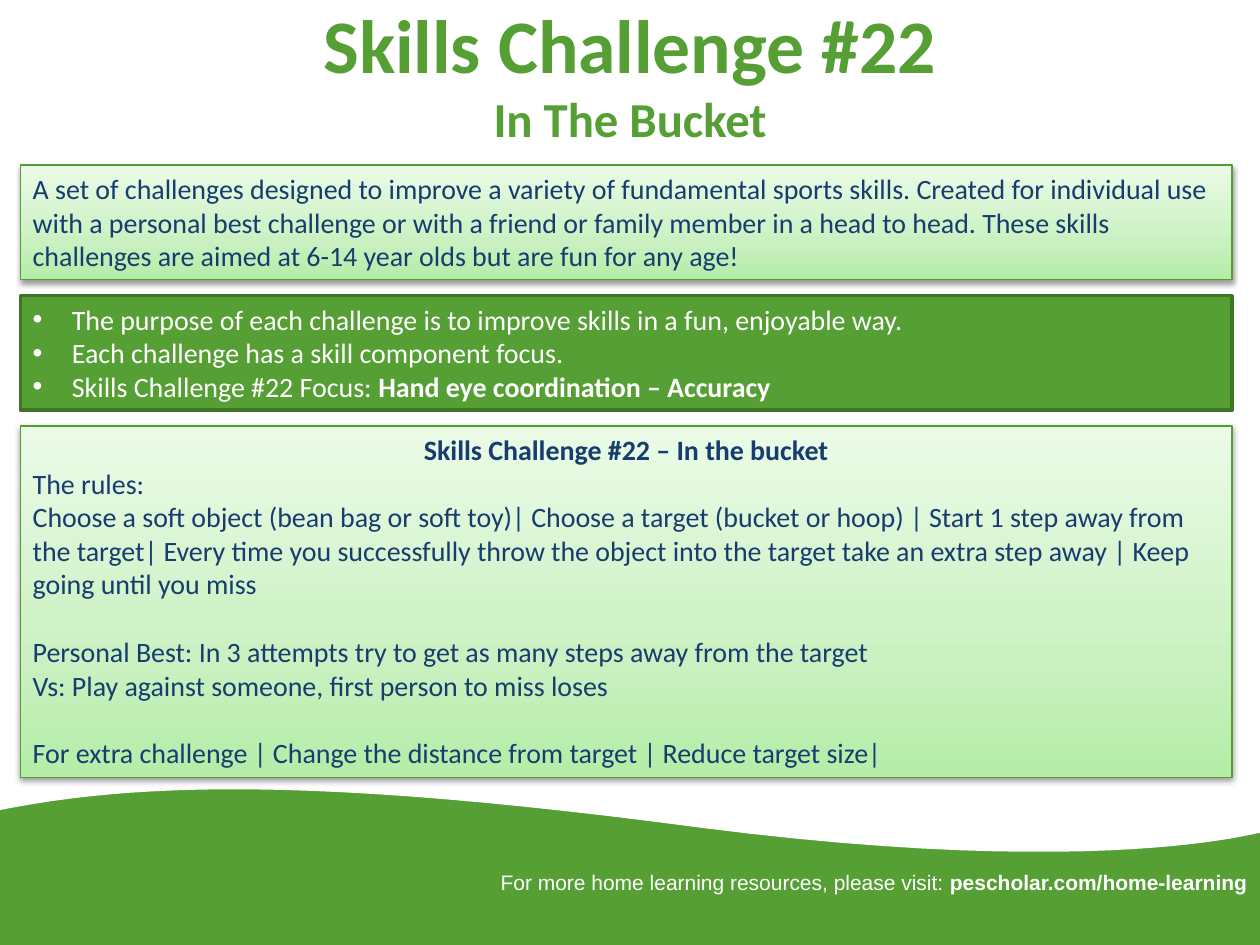
from lxml import etree
from pptx import Presentation
from pptx.dml.color import RGBColor
from pptx.enum.shapes import MSO_SHAPE
from pptx.enum.text import MSO_ANCHOR, MSO_AUTO_SIZE, PP_ALIGN
from pptx.oxml import parse_xml
from pptx.oxml.ns import nsdecls, qn
from pptx.util import Cm, Pt

RECTANGLE = MSO_SHAPE.RECTANGLE
TOP, MIDDLE = MSO_ANCHOR.TOP, MSO_ANCHOR.MIDDLE
NO_FIT = MSO_AUTO_SIZE.NONE
LEFT, CENTER, RIGHT = PP_ALIGN.LEFT, PP_ALIGN.CENTER, PP_ALIGN.RIGHT

GREEN = RGBColor(0x55, 0x9F, 0x34)
EDGE_GREEN = RGBColor(0x52, 0x9E, 0x30)
DARK_GREEN = RGBColor(0x3F, 0x76, 0x26)
NAVY = RGBColor(0x17, 0x3C, 0x6F)
WHITE = RGBColor(0xFF, 0xFF, 0xFF)
BLACK = RGBColor(0x00, 0x00, 0x00)
PANEL_STOPS = [
    (0, RGBColor(0xB4, 0xED, 0xA7)),
    (35, RGBColor(0xCB, 0xF1, 0xC2)),
    (100, RGBColor(0xEB, 0xFB, 0xE7)),
]

PAGE_WIDTH, PAGE_HEIGHT = 25.4, 19.05
PANEL_LEFT, PANEL_WIDTH = 0.41, 24.43
BLANK_LINE = Pt(19.5)
BODY = {"name": "Calibri", "size": Pt(16), "bold": False}
HEADING = {"name": "Calibri", "size": Pt(43.2), "bold": True}
FOOTER = {"name": "Arial", "size": Pt(12), "bold": False}

INTRO = [
    {"text": "A set of challenges designed to improve a variety of fundamental sports skills. "
             "Created for individual use with a personal best challenge or with a friend or "
             "family member in a head to head. These skills challenges are aimed at 6-14 year "
             "olds but are fun for any age!"},
]
PURPOSES = [
    [("The purpose of each challenge is to improve skills in a fun, enjoyable way.", False)],
    [("Each challenge has a skill component focus.", False)],
    [("Skills Challenge #22 Focus: ", False), ("Hand eye coordination – Accuracy", True)],
]
RULES = [
    {"text": "Skills Challenge #22 – In the bucket", "bold": True, "align": CENTER},
    {"text": "The rules:"},
    {"text": "Choose a soft object (bean bag or soft toy)| Choose a target (bucket or hoop) | "
             "Start 1 step away from the target| Every time you successfully throw the object "
             "into the target take an extra step away | Keep going until you miss"},
    {"text": "Personal Best: In 3 attempts try to get as many steps away from the target",
     "gap": BLANK_LINE},
    {"text": "Vs: Play against someone, first person to miss loses"},
    {"text": "For extra challenge | Change the distance from target | Reduce target size|",
     "gap": BLANK_LINE},
]


def add_span(para, text, color, **formats):
    span = para.add_run()
    span.text = text
    for name, value in formats.items():
        setattr(span.font, name, value)
    span.font.color.rgb = color


def place(shape, box):
    for name, value in zip(("left", "top", "width", "height"), box):
        setattr(shape, name, Cm(value))


def prepare_frame(shape, anchor):
    frame = shape.text_frame
    formats = {"word_wrap": True, "auto_size": NO_FIT, "vertical_anchor": anchor,
               "margin_left": Cm(0.25), "margin_right": Cm(0.25),
               "margin_top": Cm(0.13), "margin_bottom": Cm(0.13)}
    for name, value in formats.items():
        setattr(frame, name, value)
    return frame


def paragraphs(frame, count):
    return [frame.paragraphs[0]] + [frame.add_paragraph() for _ in range(count - 1)]


def curve(start, first, second, end, steps=24):
    for step in range(1, steps + 1):
        t = step / steps
        yield tuple((1 - t) ** 3 * a + 3 * (1 - t) ** 2 * t * b + 3 * (1 - t) * t ** 2 * c + t ** 3 * d
                    for a, b, c, d in zip(start, first, second, end))


def paint(shape, color):
    shape.fill.solid()
    shape.fill.fore_color.rgb = color
    shape.line.fill.background()
    shape.shadow.inherit = False


def add_wave(page, box):
    left, top, width, height = box
    ground_top = 0.58
    ground = page.shapes.add_shape(RECTANGLE, Cm(left), Cm(top + ground_top),
                                   Cm(width), Cm(height - ground_top))
    paint(ground, GREEN)
    start, crossing, end = (0, 1.14), (14.15, 1.5), (width, 1.6)
    points = [start,
              *curve(start, (2.67, 0.61), (6.22, 0.44), crossing),
              *curve(crossing, (22.28, 2.54), (width, 1.57), end),
              (width, 0)]
    outline = page.shapes.build_freeform(Cm(left), Cm(top))
    outline.add_line_segments([(Cm(left + x), Cm(top + y)) for x, y in points], close=True)
    paint(outline.convert_to_shape(), WHITE)


def add_title(page, box):
    title = page.shapes.title
    place(title, box)
    para = prepare_frame(title, MIDDLE).paragraphs[0]
    para.alignment = CENTER
    add_span(para, "Skills Challenge #22", GREEN, **HEADING)
    para.add_line_break()
    add_span(para, "In The Bucket", GREEN, **{**HEADING, "size": Pt(27.9)})


def add_panel(page, box, items):
    panel = page.shapes.add_shape(RECTANGLE, *map(Cm, box))
    properties = panel._element.spPr
    stops = "".join(f'<a:gs pos="{position * 1000}"><a:srgbClr val="{color}"/></a:gs>'
                    for position, color in PANEL_STOPS)
    properties.append(parse_xml(f'<a:gradFill {nsdecls("a")}><a:gsLst>{stops}</a:gsLst>'
                                '<a:lin ang="16200000" scaled="0"/></a:gradFill>'))
    panel.line.color.rgb = EDGE_GREEN
    panel.line.width = Pt(0.75)
    panel.shadow.inherit = False
    shadow = etree.SubElement(properties.find(qn("a:effectLst")), qn("a:outerShdw"),
                              blurRad=str(Pt(3.1)), dist=str(Pt(1.6)),
                              dir="5400000", rotWithShape="0")
    shade = etree.SubElement(shadow, qn("a:srgbClr"), val=str(BLACK))
    etree.SubElement(shade, qn("a:alpha"), val="38000")
    frame = prepare_frame(panel, TOP)
    for para, item in zip(paragraphs(frame, len(items)), items):
        para.alignment = item.get("align", LEFT)
        if "gap" in item:
            para.space_before = item["gap"]
        add_span(para, item["text"], NAVY, **{**BODY, "bold": item.get("bold", False)})


def add_purposes(page, box):
    body = page.placeholders[1]
    place(body, box)
    body.fill.solid()
    body.fill.fore_color.rgb = GREEN
    body.line.color.rgb = DARK_GREEN
    body.line.width = Pt(2)
    frame = prepare_frame(body, TOP)
    indent = Cm(0.79)
    for para, spans in zip(paragraphs(frame, len(PURPOSES)), PURPOSES):
        para.space_before = Pt(0)
        properties = para._p.get_or_add_pPr()
        properties.set("marL", str(indent))
        properties.set("indent", str(-indent))
        etree.SubElement(properties, qn("a:buFont"), typeface="Arial")
        etree.SubElement(properties, qn("a:buChar"), char="•")
        for text, bold in spans:
            add_span(para, text, WHITE, **{**BODY, "bold": bold})


def add_footer(page, box):
    footer = page.shapes.add_textbox(*map(Cm, box))
    para = prepare_frame(footer, TOP).paragraphs[0]
    para.alignment = RIGHT
    add_span(para, "For more home learning resources, please visit: ", WHITE, **FOOTER)
    add_span(para, "pescholar.com/home-learning", WHITE, **{**FOOTER, "bold": True})


def main():
    deck = Presentation()
    deck.slide_width, deck.slide_height = Cm(PAGE_WIDTH), Cm(PAGE_HEIGHT)
    page = deck.slides.add_slide(deck.slide_layouts[1])
    add_wave(page, (0, 15.19, PAGE_WIDTH, PAGE_HEIGHT - 15.19))
    add_title(page, (1.27, -0.13, 22.86, 3.18))
    add_panel(page, (PANEL_LEFT, 3.33, PANEL_WIDTH, 2.31), INTRO)
    add_purposes(page, (PANEL_LEFT, 5.96, PANEL_WIDTH, 2.31))
    add_panel(page, (PANEL_LEFT, 8.59, PANEL_WIDTH, 7.09), RULES)
    add_footer(page, (8.61, 17.4, 16.79, 0.76))
    deck.save("out.pptx")


if __name__ == "__main__":
    main()
